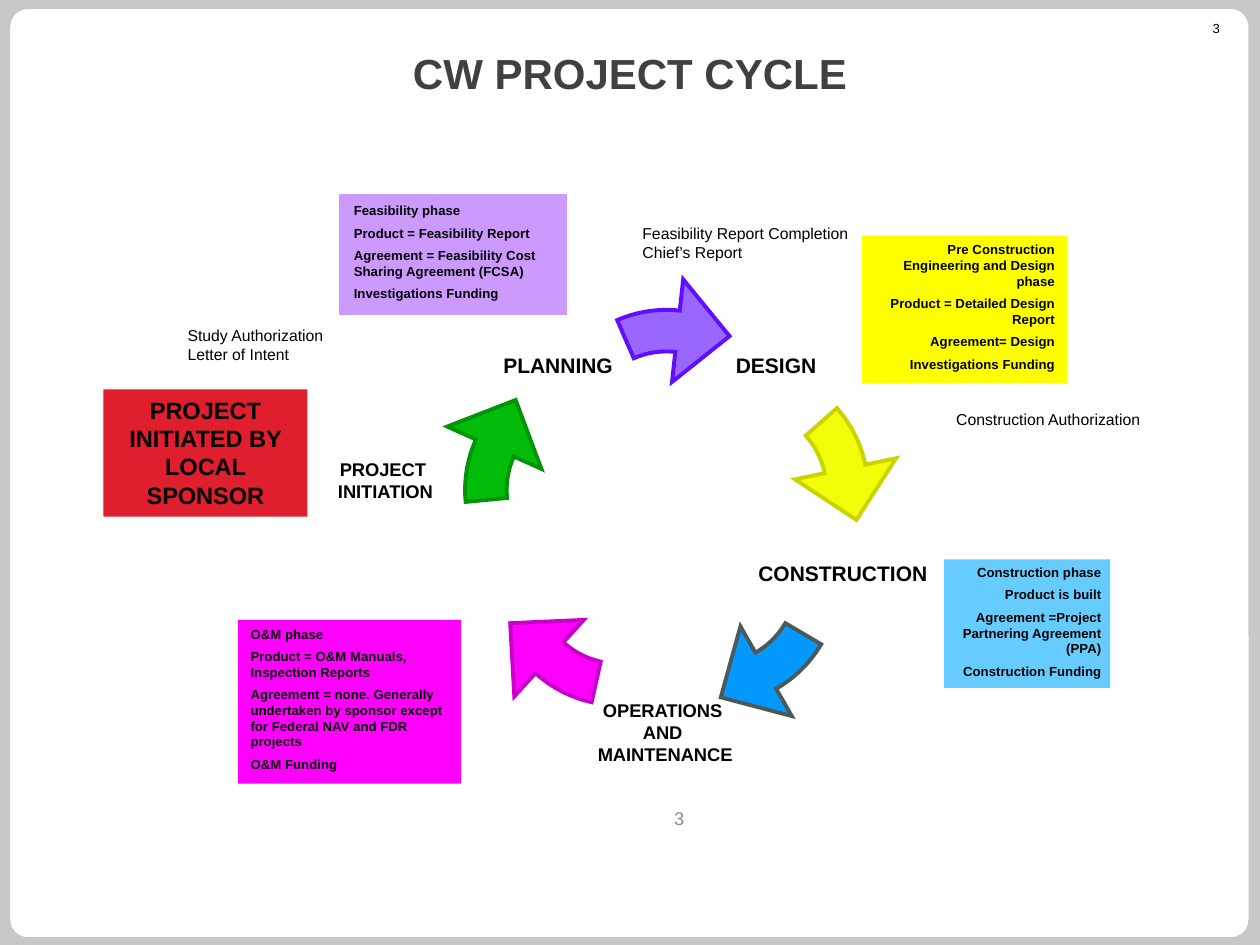
from math import cos, radians, sin, tan

from lxml import etree
from pptx import Presentation
from pptx.dml.color import RGBColor
from pptx.enum.shapes import MSO_SHAPE
from pptx.enum.text import MSO_ANCHOR, PP_ALIGN
from pptx.oxml.ns import qn
from pptx.util import Inches, Pt

RECT, ROUNDED = MSO_SHAPE.RECTANGLE, MSO_SHAPE.ROUNDED_RECTANGLE
LEFT, CENTER, RIGHT = PP_ALIGN.LEFT, PP_ALIGN.CENTER, PP_ALIGN.RIGHT
TOP, MIDDLE = MSO_ANCHOR.TOP, MSO_ANCHOR.MIDDLE

COLORS = {
    "backdrop": "C8C8C8", "page": "FFFFFF", "text": "000000",
    "title": "404040", "footer": "8C8C8C",
    "magenta": "FF00FF", "magenta edge": "CA00CA",
    "yellow": "FFFF00", "lemon": "F1FD09", "lemon edge": "CAD402",
    "lilac": "CC99FF", "violet": "9966FF", "violet edge": "5F0FFF",
    "sky": "66CCFF", "blue": "0399FF", "blue edge": "4B595B",
    "green": "01BD0A", "green edge": "019308", "red": "DF1F2E",
}
CYCLE_CENTER, CYCLE_RADIUS = (5.29, 4.09), 0.65
ARROW_SIZE = 1.96
INNER, OUTER = 0.65, 0.98
ARC_START, ARC_END = -23.5, 6.2
STAGE_WIDTH, STAGE_HEIGHT = 1.6, 0.72


def rgb(name):
    return RGBColor.from_string(COLORS[name])


def polar(center, radius, angle):
    """Point at a clockwise angle in degrees from straight up."""
    return (center[0] + radius * sin(radians(angle)),
            center[1] - radius * cos(radians(angle)))


def arc(center, radius, start, end):
    """Two control points and the end point of a Bézier arc."""
    reach = 4 / 3 * tan(radians(end - start) / 4) * radius
    first = polar(polar(center, radius, start), reach, start + 90)
    second = polar(polar(center, radius, end), -reach, end + 90)
    return first, second, polar(center, radius, end)


def arrow_commands():
    """Path of a curved clockwise arrow inside its square frame."""
    middle = (ARROW_SIZE / 2, ARROW_SIZE / 2)
    head = [polar(middle, r, a)
            for r, a in ((1.23, ARC_END), (0.92, 33), (0.41, ARC_END))]
    return [("moveTo", [polar(middle, INNER, ARC_END)]),
            ("cubicBezTo", arc(middle, INNER, ARC_END, ARC_START)),
            ("lnTo", [polar(middle, OUTER, ARC_START)]),
            ("cubicBezTo", arc(middle, OUTER, ARC_START, ARC_END)),
            *(("lnTo", [point]) for point in head),
            ("close", [])]


def write_text(frame, paragraphs, size=9, color="text", bold=False, align=LEFT,
               anchor=TOP, insets=(0.1, 0.05), wrap=True, gap=0):
    frame.word_wrap = wrap
    frame.vertical_anchor = anchor
    frame.margin_left = frame.margin_right = Inches(insets[0])
    frame.margin_top = frame.margin_bottom = Inches(insets[1])
    for i, text in enumerate(paragraphs):
        paragraph = frame.add_paragraph() if i else frame.paragraphs[0]
        paragraph.alignment = align
        if i and gap:
            paragraph.space_before = Pt(gap)
        run = paragraph.add_run()
        run.text = text
        run.font.name = "Arial"
        run.font.size = Pt(size)
        run.font.bold = bold
        run.font.color.rgb = rgb(color)


class CycleSlide:
    """Holds the slide and the look shared by its elements."""

    phase_style = {"size": 7.5, "bold": True, "gap": 3.75}
    stage_style = {"bold": True, "align": CENTER, "anchor": MIDDLE,
                   "insets": (0, 0), "wrap": False}

    def __init__(self, slide):
        self.slide = slide
        slide.background.fill.solid()
        slide.background.fill.fore_color.rgb = rgb("backdrop")

    def paint(self, shape, fill, edge=None, width=2.25):
        shape.shadow.inherit = False
        shape.fill.solid()
        shape.fill.fore_color.rgb = rgb(fill)
        if edge:
            shape.line.color.rgb = rgb(edge)
            shape.line.width = Pt(width)
            outline = shape._element.spPr.find(qn("a:ln"))
            etree.SubElement(outline, qn("a:miter"), lim="800000")
        else:
            shape.line.fill.background()

    def page(self, box):
        sheet = self.slide.shapes.add_shape(ROUNDED, *map(Inches, box))
        sheet.adjustments[0] = 0.023
        self.paint(sheet, "page", "backdrop", 4.5)

    def text(self, box, *paragraphs, **style):
        label = self.slide.shapes.add_textbox(*map(Inches, box))
        write_text(label.text_frame, paragraphs, **style)

    def stage(self, center_x, top, *lines, size=12):
        box = (center_x - STAGE_WIDTH / 2, top, STAGE_WIDTH, STAGE_HEIGHT)
        self.text(box, *lines, size=size, **self.stage_style)

    def panel(self, box, fill, *paragraphs, edge=None, **style):
        panel = self.slide.shapes.add_shape(RECT, *map(Inches, box))
        self.paint(panel, fill, edge, 3)
        write_text(panel.text_frame, paragraphs, **{**self.phase_style, **style})

    def arrow(self, angle, color):
        center = polar(CYCLE_CENTER, CYCLE_RADIUS, angle)
        left, top = (Inches(c - ARROW_SIZE / 2) for c in center)
        side = Inches(ARROW_SIZE)
        builder = self.slide.shapes.build_freeform(left, top)
        builder.add_line_segments([(left + side, top), (left + side, top + side),
                                   (left, top + side)], close=True)
        arrow = builder.convert_to_shape()
        outline = arrow._element.spPr.find(".//" + qn("a:path"))
        for corner in list(outline):
            outline.remove(corner)
        for command, points in arrow_commands():
            step = etree.SubElement(outline, qn(f"a:{command}"))
            for x, y in points:
                etree.SubElement(step, qn("a:pt"), x=str(Inches(x)), y=str(Inches(y)))
        arrow.rotation = angle
        self.paint(arrow, color, f"{color} edge")


def main():
    deck = Presentation()
    deck.slide_width, deck.slide_height = Inches(10), Inches(7.5)
    cycle = CycleSlide(deck.slides.add_slide(deck.slide_layouts[6]))

    cycle.page((0.05, 0.04, 9.89, 7.43))
    cycle.text((9.15, 0.16, 0.63, 0.13), "3", size=7.5, align=RIGHT, insets=(0.1, 0))
    cycle.text((1.25, 0.24, 7.5, 0.67), "CW PROJECT CYCLE", size=24, bold=True,
               color="title", align=CENTER, anchor=MIDDLE)

    cycle.panel((1.89, 4.92, 1.77, 1.3), "magenta", "O&M phase",
                "Product = O&M Manuals, Inspection Reports",
                "Agreement = none. Generally undertaken by sponsor except "
                "for Federal NAV and FDR projects", "O&M Funding")
    cycle.panel((6.84, 1.87, 1.63, 1.17), "yellow",
                "Pre Construction Engineering and Design phase",
                "Product = Detailed Design Report", "Agreement= Design",
                "Investigations Funding", align=RIGHT)
    cycle.panel((2.71, 1.56, 1.77, 0.92), "lilac", "Feasibility phase",
                "Product = Feasibility Report",
                "Agreement = Feasibility Cost Sharing Agreement (FCSA)",
                "Investigations Funding", edge="lilac")
    cycle.panel((7.49, 4.44, 1.32, 1.02), "sky", "Construction phase",
                "Product is built", "Agreement =Project Partnering Agreement (PPA)",
                "Construction Funding", align=RIGHT, insets=(0.07, 0.04))

    for i, color in enumerate(("violet", "lemon", "blue", "magenta", "green")):
        cycle.arrow(i * 72, color)

    cycle.stage(6.16, 2.54, "DESIGN")
    cycle.stage(6.69, 4.19, "CONSTRUCTION")
    cycle.stage(3.06, 3.45, "PROJECT ", "INITIATION", size=10.5)
    cycle.stage(5.28, 5.45, "OPERATIONS ", "AND ", "MAINTENANCE", size=10.5)
    cycle.stage(4.43, 2.54, "PLANNING")

    cycle.panel((0.82, 3.09, 1.62, 1.01), "red", "PROJECT INITIATED BY LOCAL SPONSOR",
                size=13.5, align=CENTER)
    cycle.text((4.25, 6.3, 2.28, 0.39), "3", size=10.5, color="footer",
               align=CENTER, anchor=MIDDLE)

    cycle.text((1.39, 2.54, 1.3, 0.4), "Study Authorization", "Letter of Intent",
               wrap=False)
    cycle.text((5, 1.73, 1.85, 0.4), "Feasibility Report Completion", "Chief’s Report",
               wrap=False)
    cycle.text((7.49, 3.2, 1.68, 0.25), "Construction Authorization", wrap=False)

    deck.save("out.pptx")


if __name__ == "__main__":
    main()
